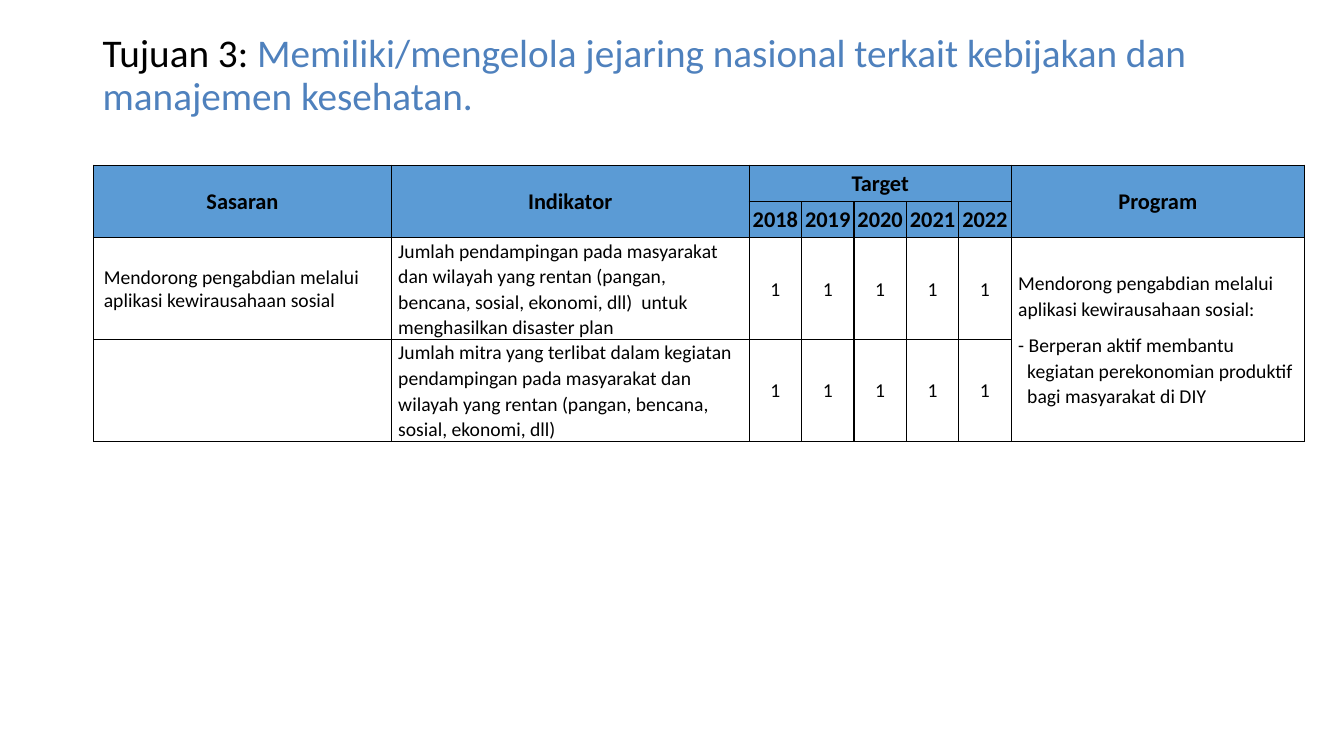
from dataclasses import dataclass

from lxml.etree import SubElement
from pptx import Presentation
from pptx.dml.color import RGBColor as RGB
from pptx.enum.text import MSO_ANCHOR as Anchor, PP_ALIGN as Align
from pptx.oxml.ns import qn
from pptx.util import Inches, Pt


@dataclass(frozen=True)
class Theme:
    font: str = "Calibri"
    black: str = "000000"
    white: str = "FFFFFF"
    accent: str = "4F81BD"
    header: str = "5B9BD5"
    title_size: int = 28
    header_size: int = 16
    body_size: int = 14
    border: float = 1


THEME = Theme()
TIGHT = (0.01, 0.01, 0.01, 0)
PADDED = (0.07, 0, 0.07, 0)
COL_WIDTHS = [2.95, 3.55] + [0.52] * 5 + [2.91]
ROW_HEIGHTS = [0.36, 0.36, 1.01, 1.01]
YEARS = range(2018, 2023)
FIRST_YEAR_COL, PROGRAM_COL = 2, 7
INDICATORS = [
    "Jumlah pendampingan pada masyarakat dan wilayah yang rentan (pangan, "
    "bencana, sosial, ekonomi, dll)  untuk menghasilkan disaster plan",
    "Jumlah mitra yang terlibat dalam kegiatan pendampingan pada masyarakat dan "
    "wilayah yang rentan (pangan, bencana, sosial, ekonomi, dll)",
]


def write(p, text, size=THEME.body_size, color=THEME.black, bold=False,
          align=None, spacing=None, after=None, margin=None, indent=0):
    """Append a formatted run to a paragraph and set the paragraph's layout."""
    if margin is not None:
        pPr = p._p.get_or_add_pPr()
        pPr.set("marL", str(Inches(margin)))
        pPr.set("indent", str(Inches(indent)))
    if align is not None:
        p.alignment = align
    if spacing is not None:
        p.line_spacing = spacing
    if after is not None:
        p.space_after = Pt(after)
    r = p.add_run()
    r.text = text
    r.font.name = THEME.font
    r.font.size = Pt(size)
    r.font.bold = bold
    r.font.color.rgb = RGB.from_string(color)


def set_margins(box, margins):
    box.margin_left, box.margin_top, box.margin_right, box.margin_bottom = map(Inches, margins)


def add_borders(cell):
    tcPr = cell._tc.get_or_add_tcPr()
    for side in ("a:lnL", "a:lnR", "a:lnT", "a:lnB"):
        ln = SubElement(tcPr, qn(side), w=str(Pt(THEME.border)))
        fill = SubElement(ln, qn("a:solidFill"))
        SubElement(fill, qn("a:srgbClr"), val=THEME.black)


def add_title(s):
    tf = s.shapes.add_textbox(Inches(0.92), Inches(0.4), Inches(11.18), Inches(0.71)).text_frame
    tf.word_wrap = True
    tf.vertical_anchor = Anchor.MIDDLE
    p = tf.paragraphs[0]
    write(p, "Tujuan 3: ", size=THEME.title_size, spacing=0.9)
    write(p, "Memiliki/mengelola jejaring nasional terkait kebijakan dan manajemen kesehatan.",
          size=THEME.title_size, color=THEME.accent)


def add_grid(s):
    """Add the bordered, filled and merged table without its text."""
    table = s.shapes.add_table(
        len(ROW_HEIGHTS), len(COL_WIDTHS), Inches(0.93), Inches(1.64),
        Inches(sum(COL_WIDTHS)), Inches(sum(ROW_HEIGHTS))).table
    for col, width in zip(table.columns, COL_WIDTHS):
        col.width = Inches(width)
    for i, (row, height) in enumerate(zip(table.rows, ROW_HEIGHTS)):
        row.height = Inches(height)
        for cell in row.cells:
            add_borders(cell)
            cell.fill.solid()
            cell.fill.fore_color.rgb = RGB.from_string(THEME.header if i < 2 else THEME.white)
            cell.vertical_anchor = Anchor.MIDDLE
            set_margins(cell, TIGHT)
    for top, left, bottom, right in [(0, 0, 1, 0), (0, 1, 1, 1), (0, 2, 0, 6),
                                     (0, 7, 1, 7), (2, 7, 3, 7)]:
        table.cell(top, left).merge(table.cell(bottom, right))
    return table


def fill_header(table):
    labels = {(0, 0): "Sasaran", (0, 1): "Indikator",
              (0, FIRST_YEAR_COL): "Target", (0, PROGRAM_COL): "Program"}
    labels.update({(1, col): str(year) for col, year in enumerate(YEARS, FIRST_YEAR_COL)})
    for position, label in labels.items():
        write(table.cell(*position).text_frame.paragraphs[0], label,
              size=THEME.header_size, bold=True, align=Align.CENTER)


def fill_body(table):
    prose = dict(spacing=1.07, after=8)
    write(table.cell(2, 0).text_frame.paragraphs[0],
          "Mendorong pengabdian melalui aplikasi kewirausahaan sosial", margin=0.09)
    for row, indicator in enumerate(INDICATORS, 2):
        cell = table.cell(row, 1)
        set_margins(cell, PADDED)
        write(cell.text_frame.paragraphs[0], indicator, **prose)
        for col in range(FIRST_YEAR_COL, PROGRAM_COL):
            write(table.cell(row, col).text_frame.paragraphs[0], "1", align=Align.CENTER)
    program = table.cell(2, PROGRAM_COL)
    set_margins(program, PADDED)
    tf = program.text_frame
    write(tf.paragraphs[0], "Mendorong pengabdian melalui aplikasi kewirausahaan sosial:", **prose)
    write(tf.add_paragraph(),
          "- Berperan aktif membantu kegiatan perekonomian produktif bagi masyarakat di DIY",
          margin=0.09, indent=-0.09, **prose)


def main():
    prs = Presentation()
    prs.slide_width, prs.slide_height = Inches(13.33), Inches(7.5)
    s = prs.slides.add_slide(prs.slide_layouts[6])
    add_title(s)
    table = add_grid(s)
    fill_header(table)
    fill_body(table)
    prs.save("out.pptx")


if __name__ == "__main__":
    main()
